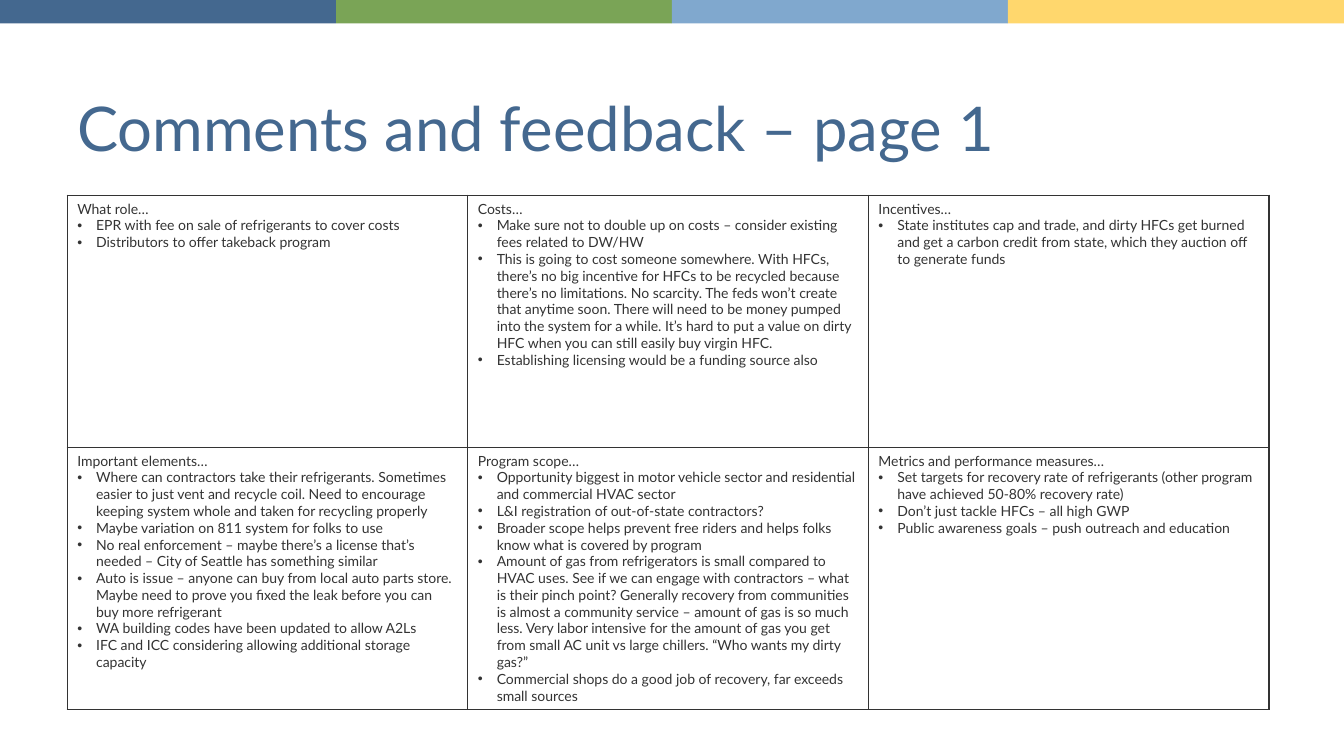
from lxml.etree import SubElement
from pptx import Presentation
from pptx.dml.color import RGBColor
from pptx.enum.shapes import MSO_SHAPE
from pptx.enum.text import MSO_ANCHOR
from pptx.oxml.ns import qn
from pptx.util import Pt

SLIDE_WIDTH, SLIDE_HEIGHT = 960, 540
NAVY = RGBColor(0x44, 0x68, 0x8F)
GREEN = RGBColor(0x7A, 0xA4, 0x56)
SKY = RGBColor(0x80, 0xA8, 0xCE)
YELLOW = RGBColor(0xFF, 0xD7, 0x6D)
CHARCOAL = RGBColor(0x33, 0x33, 0x33)
FONT = "Lato"
BULLET_INDENT = 13.5

FEEDBACK = [
    [
        ("What role…", [
            "EPR with fee on sale of refrigerants to cover costs",
            "Distributors to offer takeback program",
        ]),
        ("Costs…", [
            "Make sure not to double up on costs – consider existing fees related to DW/HW",
            "This is going to cost someone somewhere. With HFCs, there’s no big incentive for "
            "HFCs to be recycled because there’s no limitations. No scarcity. The feds won’t "
            "create that anytime soon. There will need to be money pumped into the system for "
            "a while. It’s hard to put a value on dirty HFC when you can still easily buy "
            "virgin HFC.",
            "Establishing licensing would be a funding source also",
        ]),
        ("Incentives…", [
            "State institutes cap and trade, and dirty HFCs get burned and get a carbon credit "
            "from state, which they auction off to generate funds",
        ]),
    ],
    [
        ("Important elements…", [
            "Where can contractors take their refrigerants. Sometimes easier to just vent and "
            "recycle coil. Need to encourage keeping system whole and taken for recycling "
            "properly",
            "Maybe variation on 811 system for folks to use",
            "No real enforcement – maybe there’s a license that’s needed – City of Seattle has "
            "something similar",
            "Auto is issue – anyone can buy from local auto parts store. Maybe need to prove "
            "you fixed the leak before you can buy more refrigerant",
            "WA building codes have been updated to allow A2Ls",
            "IFC and ICC considering allowing additional storage capacity",
        ]),
        ("Program scope…", [
            "Opportunity biggest in motor vehicle sector and residential and commercial HVAC "
            "sector",
            "L&I registration of out-of-state contractors?",
            "Broader scope helps prevent free riders and helps folks know what is covered by "
            "program",
            "Amount of gas from refrigerators is small compared to HVAC uses. See if we can "
            "engage with contractors – what is their pinch point? Generally recovery from "
            "communities is almost a community service – amount of gas is so much less. Very "
            "labor intensive for the amount of gas you get from small AC unit vs large "
            "chillers. “Who wants my dirty gas?”",
            "Commercial shops do a good job of recovery, far exceeds small sources",
        ]),
        ("Metrics and performance measures…", [
            "Set targets for recovery rate of refrigerants (other program have achieved 50-80% "
            "recovery rate)",
            "Don’t just tackle HFCs – all high GWP",
            "Public awareness goals – push outreach and education",
        ]),
    ],
]


def style_font(paragraph, size, color):
    paragraph.font.name = FONT
    paragraph.font.size = Pt(size)
    paragraph.font.color.rgb = color


def add_color_band(slide, left, top, width, height):
    colors = [NAVY, GREEN, SKY, YELLOW]
    stripe_width = width / len(colors)
    for index, color in enumerate(colors):
        stripe = slide.shapes.add_shape(
            MSO_SHAPE.RECTANGLE, Pt(left + index * stripe_width), Pt(top),
            Pt(stripe_width), Pt(height))
        stripe.shadow.inherit = False
        stripe.fill.solid()
        stripe.fill.fore_color.rgb = color
        stripe.line.fill.background()


def add_title(slide, left, top, width, height):
    title = slide.shapes.add_textbox(Pt(left), Pt(top), Pt(width), Pt(height)).text_frame
    title.word_wrap = True
    title.vertical_anchor = MSO_ANCHOR.BOTTOM
    heading = title.paragraphs[0]
    heading.text = "Comments and feedback – page 1"
    heading.line_spacing = 0.9
    style_font(heading, 44, NAVY)


def add_bullet(paragraph):
    properties = paragraph._p.get_or_add_pPr()
    properties.set("marL", str(Pt(BULLET_INDENT)))
    properties.set("indent", str(-Pt(BULLET_INDENT)))
    SubElement(properties, qn("a:buFont"), typeface="Arial")
    SubElement(properties, qn("a:buChar"), char="•")


def add_borders(cell):
    properties = cell._tc.get_or_add_tcPr()
    for side in ("a:lnL", "a:lnR", "a:lnT", "a:lnB"):
        border = SubElement(properties, qn(side), w=str(Pt(1)))
        fill = SubElement(border, qn("a:solidFill"))
        SubElement(fill, qn("a:srgbClr"), val=str(CHARCOAL))


def fill_cell(cell, topic, comments):
    add_borders(cell)
    cell.fill.background()
    heading = cell.text_frame.paragraphs[0]
    heading.text = topic
    style_font(heading, 10, CHARCOAL)
    for comment in comments:
        item = cell.text_frame.add_paragraph()
        item.text = comment
        add_bullet(item)
        style_font(item, 10, CHARCOAL)


def add_feedback_table(slide, left, top, width, height):
    row_count, column_count = len(FEEDBACK), len(FEEDBACK[0])
    table = slide.shapes.add_table(
        row_count, column_count, Pt(left), Pt(top), Pt(width), Pt(height)).table
    table.first_row = False
    table.horz_banding = False
    for row_index, topics in enumerate(FEEDBACK):
        for column_index, (topic, comments) in enumerate(topics):
            fill_cell(table.cell(row_index, column_index), topic, comments)


def main():
    presentation = Presentation()
    presentation.slide_width = Pt(SLIDE_WIDTH)
    presentation.slide_height = Pt(SLIDE_HEIGHT)
    slide = presentation.slides.add_slide(presentation.slide_layouts[6])
    add_color_band(slide, 0, 0, SLIDE_WIDTH, 16.8)
    add_title(slide, 48, 31, 858.5, 90)
    add_feedback_table(slide, 48, 139.5, 858.5, 360)
    presentation.save("out.pptx")


if __name__ == "__main__":
    main()
